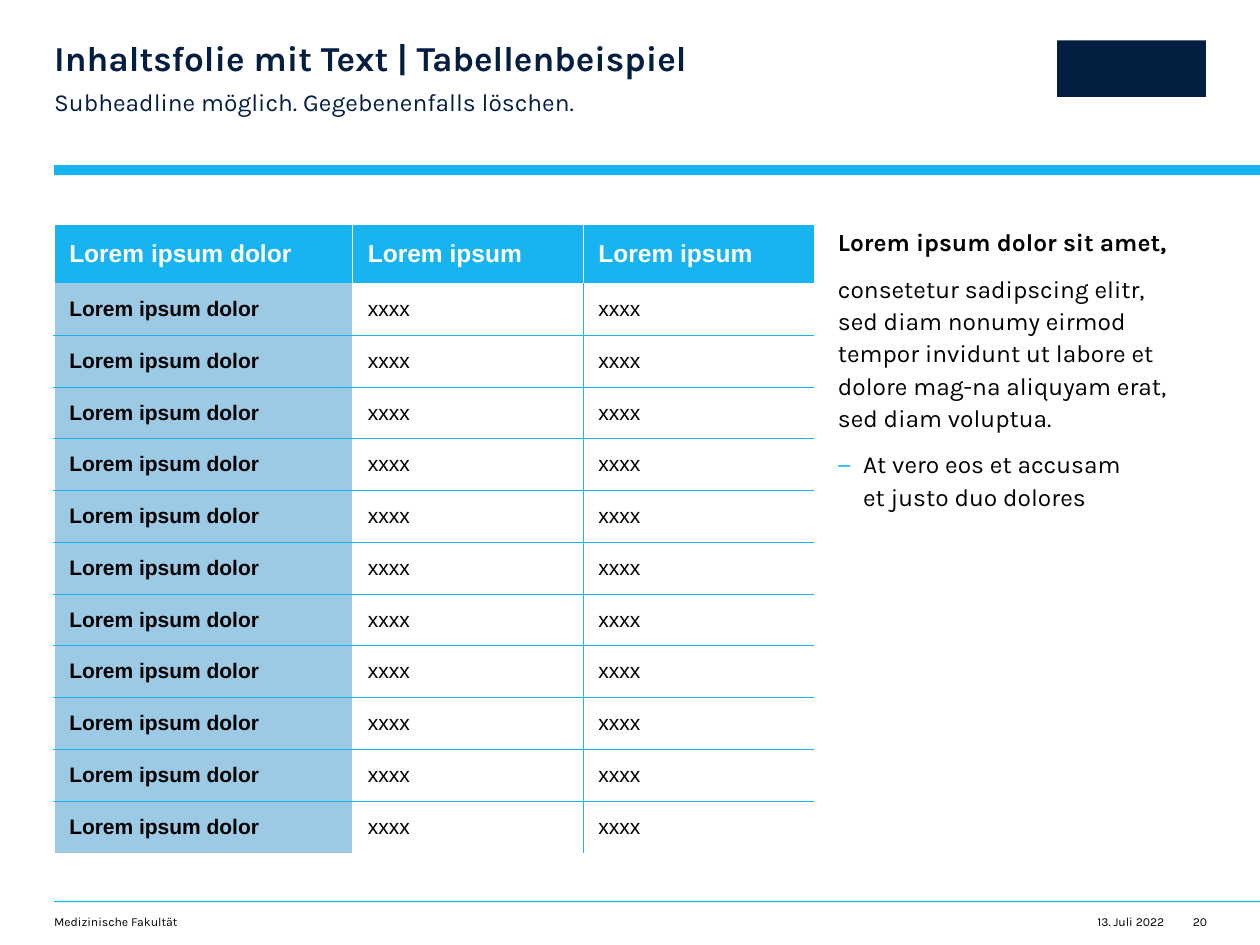
from lxml import etree
from pptx import Presentation
from pptx.dml.color import RGBColor
from pptx.enum.shapes import MSO_SHAPE
from pptx.enum.text import MSO_ANCHOR, MSO_AUTO_SIZE, PP_ALIGN
from pptx.oxml.ns import qn
from pptx.util import Inches, Pt

RECTANGLE = MSO_SHAPE.RECTANGLE
LEFT, RIGHT = PP_ALIGN.LEFT, PP_ALIGN.RIGHT
TOP, MIDDLE = MSO_ANCHOR.TOP, MSO_ANCHOR.MIDDLE
NO_AUTOFIT = MSO_AUTO_SIZE.NONE

COLORS = {
    "sky": "18B4F1",
    "pale": "9CC9E4",
    "navy": "041E42",
    "black": "000000",
    "white": "FFFFFF",
}
PLAIN_TABLE_STYLE = "{2D5ABB26-0587-4C30-8999-92F81FD0307C}"
MARGIN = 0.43
BODY_ROWS = 11
HEADER = ["Lorem ipsum dolor", "Lorem ipsum", "Lorem ipsum"]
BODY_ROW = ["Lorem ipsum dolor", "xxxx", "xxxx"]


class FacultySlide:
    """Holds the style and the current slide."""

    text_font, table_font = "Karla", "Arial"

    def __init__(self, slide):
        self.slide = slide

    def color(self, name):
        return RGBColor.from_string(COLORS[name])

    def place(self, shape, box):
        shape.left, shape.top, shape.width, shape.height = map(Inches, box)

    def bar(self, box, color):
        shape = self.slide.shapes.add_shape(RECTANGLE, *map(Inches, box))
        shape.shadow.inherit = False
        shape.fill.solid()
        shape.fill.fore_color.rgb = self.color(color)
        shape.line.fill.background()

    def style(self, paragraph, size, color, bold=False, font=text_font):
        paragraph.font.name = font
        paragraph.font.size = Pt(size)
        paragraph.font.bold = bold
        paragraph.font.color.rgb = self.color(color)

    def frame(self, shape, wrap=True, right_inset=0):
        frame = shape.text_frame
        frame.margin_left = frame.margin_top = frame.margin_bottom = 0
        frame.margin_right = Inches(right_inset)
        frame.auto_size = NO_AUTOFIT
        frame.word_wrap = wrap
        frame.vertical_anchor = TOP
        return frame

    def title(self, text, box):
        shape = self.slide.shapes.title
        self.place(shape, box)
        paragraph = self.frame(shape).paragraphs[0]
        paragraph.text = text
        paragraph.alignment = LEFT
        paragraph.line_spacing = 0.9
        self.style(paragraph, 20, "navy", bold=True)

    def body(self, index, items, box, color="black", right_inset=0.2):
        """Each item is (text, bold, bulleted)."""
        shape = self.slide.placeholders[index]
        self.place(shape, box)
        frame = self.frame(shape, right_inset=right_inset)
        for number, (text, bold, bulleted) in enumerate(items):
            paragraph = frame.add_paragraph() if number else frame.paragraphs[0]
            paragraph.text = text
            paragraph.line_spacing = 1.1
            paragraph.space_before = Pt(0)
            paragraph.space_after = Pt(8)
            self.bullet(paragraph, bulleted)
            self.style(paragraph, 14, color, bold)

    def bullet(self, paragraph, bulleted):
        paragraph.level = 1 if bulleted else 0
        indent = Inches(0.2) if bulleted else 0
        properties = paragraph._p.get_or_add_pPr()
        properties.set("marL", str(indent))
        properties.set("indent", str(-indent))
        if not bulleted:
            etree.SubElement(properties, qn("a:buNone"))
            return
        bullet_color = etree.SubElement(properties, qn("a:buClr"))
        etree.SubElement(bullet_color, qn("a:srgbClr"), val=COLORS["sky"])
        etree.SubElement(properties, qn("a:buFont"), typeface=self.text_font)
        etree.SubElement(properties, qn("a:buChar"), char="−")

    def footer(self, text, box, alignment=LEFT):
        shape = self.slide.shapes.add_textbox(*map(Inches, box))
        paragraph = self.frame(shape, wrap=alignment == LEFT).paragraphs[0]
        paragraph.text = text
        paragraph.alignment = alignment
        self.style(paragraph, 7, "black")

    def borders(self, cell, lines):
        """Lines run left, right, top, bottom; each is (color, points) or None."""
        properties = cell._tc.get_or_add_tcPr()
        for position, (side, line) in enumerate(zip("LRTB", lines)):
            edge = etree.Element(qn(f"a:ln{side}"))
            if line:
                color, points = line
                edge.set("w", str(Pt(points)))
                fill = etree.SubElement(edge, qn("a:solidFill"))
                etree.SubElement(fill, qn("a:srgbClr"), val=COLORS[color])
            else:
                etree.SubElement(edge, qn("a:noFill"))
            properties.insert(position, edge)

    def cell(self, cell, text, size, color, bold, fill):
        cell.margin_left = cell.margin_right = Inches(0.12)
        cell.margin_top = cell.margin_bottom = Inches(0.04)
        cell.vertical_anchor = MIDDLE
        paragraph = cell.text_frame.paragraphs[0]
        paragraph.text = text
        self.style(paragraph, size, color, bold, self.table_font)
        if fill:
            cell.fill.solid()
            cell.fill.fore_color.rgb = self.color(fill)
        else:
            cell.fill.background()

    def table(self, rows, widths, header_height, box):
        last = len(rows) - 1
        frame = self.slide.shapes.add_table(len(rows), len(widths), *map(Inches, box))
        frame._element.find(".//" + qn("a:tableStyleId")).text = PLAIN_TABLE_STYLE
        table = frame.table
        for column, width in zip(table.columns, widths):
            column.width = Inches(width)
        for number, row in enumerate(table.rows):
            body_height = (box[3] - header_height) / last
            row.height = Inches(body_height if number else header_height)

        thin, white = ("sky", 0.25), ("white", 1)
        header_edges = [white, ("white", 0.5), ("white", 0.5), None]
        body_edges = [white, white, thin, None]
        for r, texts in enumerate(rows):
            edges = body_edges if r else header_edges
            above = thin if r > 1 else None if r else white
            below = thin if 0 < r < last else None
            for c, text in enumerate(texts):
                cell = table.cell(r, c)
                if r == 0:
                    self.cell(cell, text, 14, "white", True, "sky")
                else:
                    self.cell(cell, text, 12, "black", c == 0, None if c else "pale")
                self.borders(cell, [edges[c], edges[c + 1], above, below])


def main():
    presentation = Presentation()
    presentation.slide_width, presentation.slide_height = Inches(10), Inches(7.5)
    two_content = presentation.slide_layouts[3]
    page = FacultySlide(presentation.slides.add_slide(two_content))

    # Rules and the plain block in the logo's place
    page.bar((MARGIN, 1.31, 10 - MARGIN, 0.08), "sky")
    page.bar((MARGIN, 7.15, 10 - MARGIN, 0.01), "sky")
    page.bar((8.39, 0.32, 1.18, 0.45), "navy")

    # Heading
    page.title("Inhaltsfolie mit Text | Tabellenbeispiel", (MARGIN, 0.33, 5.61, 0.3))
    subheadline = "Subheadline möglich. Gegebenenfalls löschen."
    page.body(1, [(subheadline, False, False)], (MARGIN, 0.67, 5.61, 0.24),
              color="navy", right_inset=0.39)

    # Table
    page.table([HEADER] + [BODY_ROW] * BODY_ROWS, [2.37, 1.83, 1.83], 0.47,
               (MARGIN, 1.78, 6.03, 4.99))

    # Side text
    page.body(2, [
        ("Lorem ipsum dolor sit amet,", True, False),
        ("consetetur sadipscing elitr, sed diam nonumy eirmod tempor invidunt "
         "ut labore et dolore mag-na aliquyam erat, sed diam voluptua.", False, False),
        ("At vero eos et accusam\vet justo duo dolores", False, True),
    ], (6.65, 1.78, 2.93, 5))

    # Footer
    page.footer("Medizinische Fakultät", (MARGIN, 7.26, 4.49, 0.12))
    page.footer("13. Juli 2022", (8.67, 7.26, 0.57, 0.12), RIGHT)
    page.footer("20", (9.47, 7.26, 0.11, 0.12), RIGHT)

    presentation.save("out.pptx")


if __name__ == "__main__":
    main()
